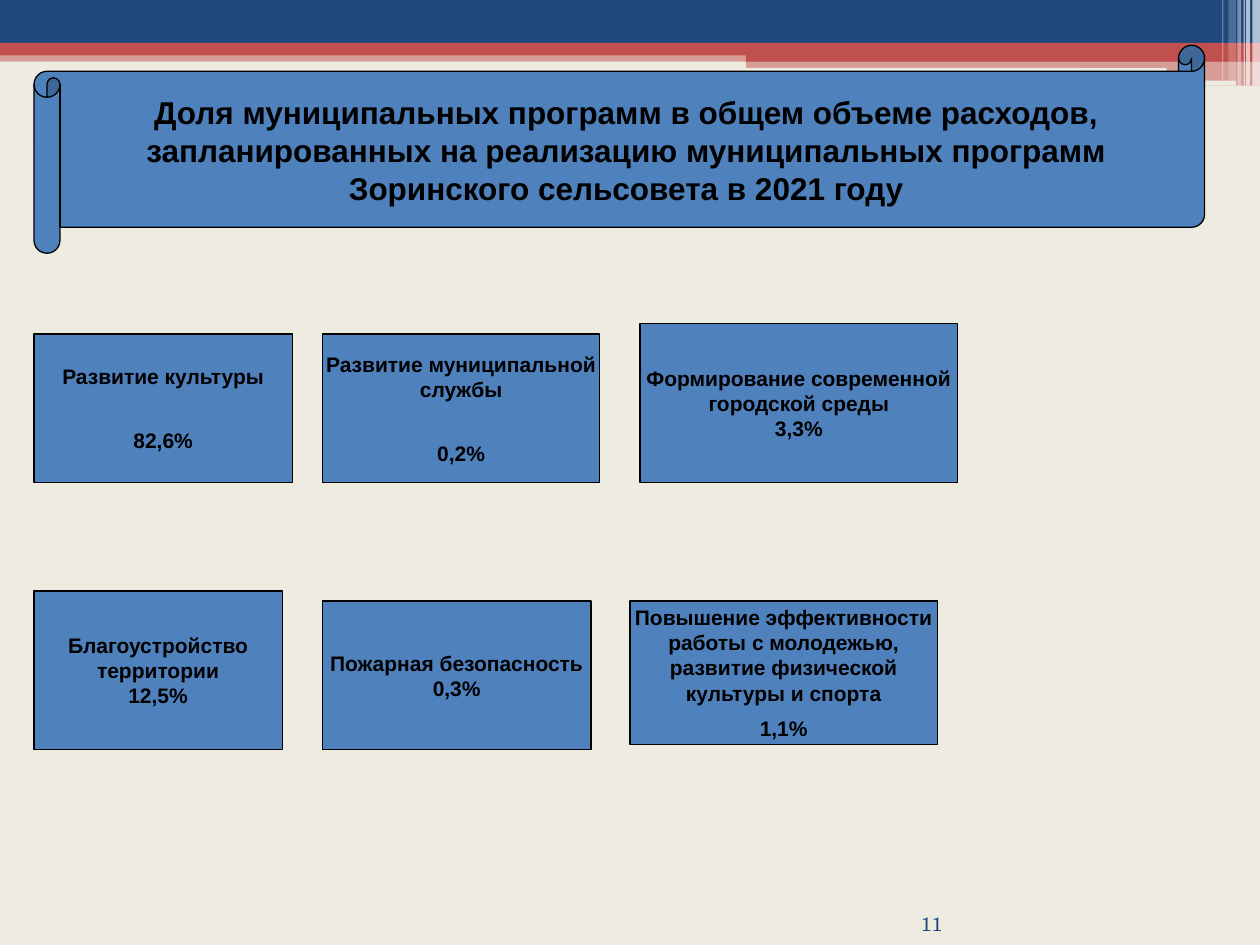
from lxml import etree
from pptx import Presentation
from pptx.dml.color import RGBColor
from pptx.enum.shapes import MSO_SHAPE
from pptx.enum.text import MSO_ANCHOR, MSO_AUTO_SIZE, PP_ALIGN
from pptx.oxml.ns import qn
from pptx.util import Inches, Pt

RECTANGLE, ROUNDED = MSO_SHAPE.RECTANGLE, MSO_SHAPE.ROUNDED_RECTANGLE
PROCESS, SCROLL = MSO_SHAPE.FLOWCHART_PROCESS, MSO_SHAPE.HORIZONTAL_SCROLL
CENTER, RIGHT = PP_ALIGN.CENTER, PP_ALIGN.RIGHT
MIDDLE, BOTTOM = MSO_ANCHOR.MIDDLE, MSO_ANCHOR.BOTTOM

THEME = {
    "paper": "EEECE1", "navy": "1F497D", "red": "C0504D", "white": "FFFFFF",
    "blue": "4F81BD", "ink": "000000",
    "font": "Arial", "number_font": "TeX Gyre Schola",
    "title_size": 18, "body_size": 12, "number_size": 11, "outline": 0.75,
}

TITLE = [
    "Доля муниципальных программ в общем объеме расходов,",
    "запланированных на реализацию муниципальных программ",
    "Зоринского сельсовета в 2021 году",
]
SCROLL_AREA = (0.27, 0.36, 9.29, 1.65)
TITLE_AREA = (0.48, 0.57, 8.98, 1.24)
PAGE_NUMBER = "11"
NUMBER_AREA = (6.84, 7.17, 0.64, 0.25)

# (area, programme name lines, share, points of space above the share)
PROGRAMMES = [
    ((0.27, 2.65, 2.05, 1.18), ["Развитие культуры"], "82,6%", 22),
    ((2.56, 2.65, 2.2, 1.18), ["Развитие муниципальной", "службы"], "0,2%", 22),
    ((5.08, 2.57, 2.52, 1.26), ["Формирование современной", "городской среды"], "3,3%", 0),
    ((0.27, 4.69, 1.97, 1.26), ["Благоустройство", "территории"], "12,5%", 0),
    ((2.56, 4.77, 2.13, 1.18), ["Пожарная безопасность"], "0,3%", 0),
    ((5, 4.77, 2.44, 1.14),
     ["Повышение эффективности", "работы с молодежью,", "развитие физической",
      "культуры и спорта"], "1,1%", 6),
]

# (preset, area, colour, opacity in percent)
BANDS = [
    (RECTANGLE, (0, 0.4, 10, 0.09), "red", 50),
    (RECTANGLE, (0, 0, 10, 0.34), "navy", 100),
    (RECTANGLE, (0, 0.34, 10, 0.1), "red", 100),
    (RECTANGLE, (5.92, 0.39, 4.08, 0.1), "red", 100),
    (RECTANGLE, (5.92, 0.48, 4.08, 0.2), "red", 50),
    (ROUNDED, (5.91, 0.54, 3.35, 0.03), "paper", 100),
    (ROUNDED, (8.06, 0.64, 1.75, 0.04), "paper", 100),
]
# (left, width, height, opacity in percent)
CORNER_STRIPES = [
    (9.94, 0.06, 0.68, 65), (9.89, 0.03, 0.68, 65), (9.87, 0.01, 0.68, 60),
    (9.82, 0.03, 0.68, 40), (9.75, 0.06, 0.64, 20), (9.7, 0.01, 0.64, 30),
]


def color(name):
    return RGBColor.from_string(THEME[name])


def add_box(page, preset, area, fill, opacity=100, outlined=False):
    box = page.shapes.add_shape(preset, *map(Inches, area))
    box.shadow.inherit = False
    box.fill.solid()
    box.fill.fore_color.rgb = color(fill)
    if opacity < 100:
        tint = box.fill._xPr.find(qn("a:solidFill"))[0]
        etree.SubElement(tint, qn("a:alpha"), val=str(opacity * 1000))
    if outlined:
        box.line.color.rgb = color("ink")
        box.line.width = Pt(THEME["outline"])
    else:
        box.line.fill.background()
    return box


def write(box, lines, size, font="font", ink="ink", bold=True, align=CENTER, anchor=MIDDLE):
    """Fill a shape with one paragraph per line, all in the same style."""
    frame = box.text_frame
    frame.word_wrap = False
    frame.auto_size = MSO_AUTO_SIZE.NONE
    frame.vertical_anchor = anchor
    frame.margin_left = frame.margin_right = frame.margin_top = frame.margin_bottom = 0
    frame.text = "\n".join(lines)
    for para in frame.paragraphs:
        para.alignment = align
        para.font.name = THEME[font]
        para.font.size = Pt(THEME[size])
        para.font.bold = bold
        para.font.color.rgb = color(ink)
    return frame


def add_decoration(page):
    for preset, area, fill, opacity in BANDS:
        add_box(page, preset, area, fill, opacity)
    for left, width, height, opacity in CORNER_STRIPES:
        add_box(page, RECTANGLE, (left, 0, width, height), "white", opacity)


def add_title(page):
    add_box(page, SCROLL, SCROLL_AREA, "blue", outlined=True)
    title = page.shapes.title
    title.left, title.top, title.width, title.height = map(Inches, TITLE_AREA)
    write(title, TITLE, "title_size")
    page.shapes._spTree.append(title._element)  # bring in front of the scroll


def main():
    deck = Presentation()
    deck.slide_width, deck.slide_height = Inches(10), Inches(7.5)
    page = deck.slides.add_slide(deck.slide_layouts[5])
    page.background.fill.solid()
    page.background.fill.fore_color.rgb = color("paper")

    add_decoration(page)
    number = page.shapes.add_textbox(*map(Inches, NUMBER_AREA))
    write(number, [PAGE_NUMBER], "number_size", "number_font", "navy", False, RIGHT, BOTTOM)
    for area, name, share, gap in PROGRAMMES:
        box = add_box(page, PROCESS, area, "blue", outlined=True)
        frame = write(box, name + [share], "body_size")
        frame.paragraphs[-1].space_before = Pt(gap)
    add_title(page)
    deck.save("out.pptx")


if __name__ == "__main__":
    main()
